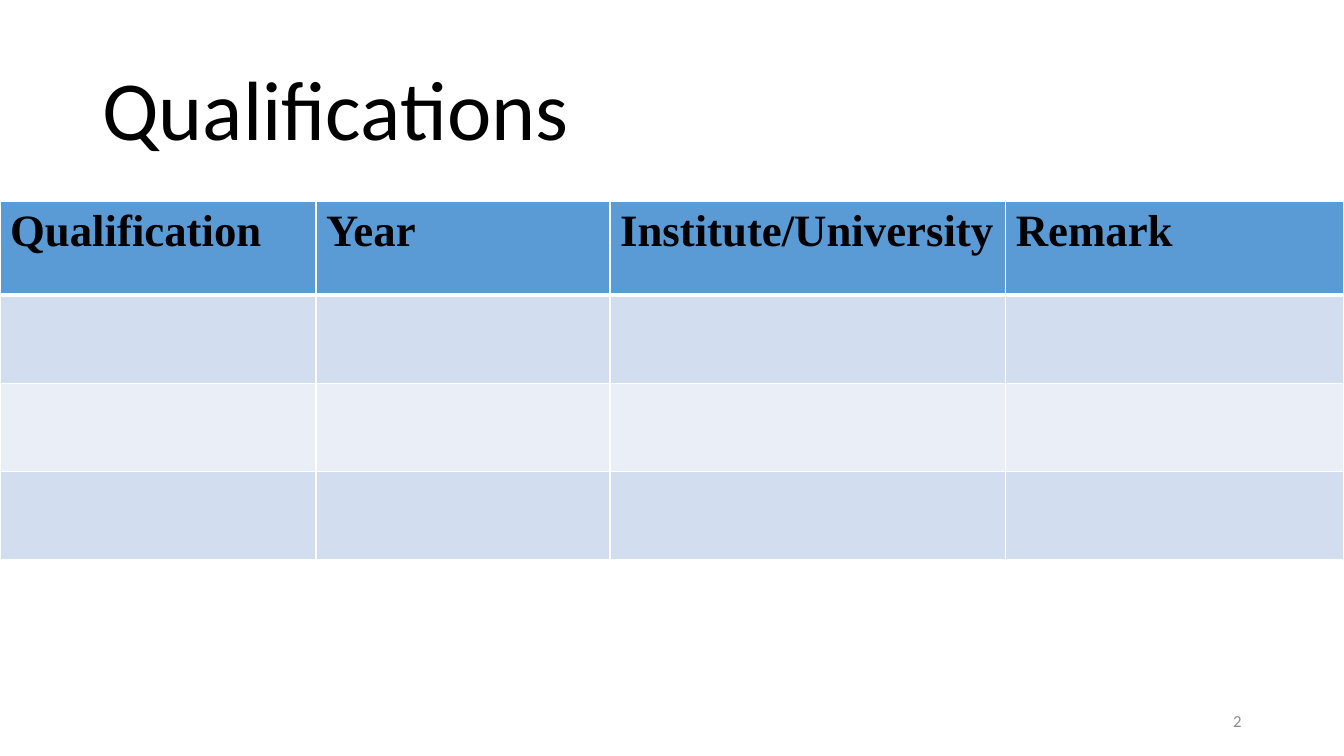
from lxml import etree
from pptx import Presentation
from pptx import util as u
from pptx.dml.color import RGBColor
from pptx.enum import text
from pptx.oxml import ns

PX = 9525
SLIDE_SIZE = (1280, 720)
HEADINGS = ["Qualification", "Year", "Institute/University", "Remark"]
COLUMN_WIDTHS = [301, 280, 377, 322]
ROW_HEIGHTS = [89, 84, 84, 84]
HEADER_FILL = "5B9BD5"
BAND_FILLS = ["EAEFF7", "D2DEEF"]


def px(length):
    """Turn whole pixels into EMU."""
    return u.Emu(length * PX)


def paint(target, color):
    """Give a fill or a font a solid hex colour."""
    if hasattr(target, "solid"):
        target.solid()
        target.fore_color.rgb = RGBColor.from_string(color)
    else:
        target.color.rgb = RGBColor.from_string(color)


def add_run(paragraph, words, size, font, color, bold=False):
    """Add one styled run to a paragraph."""
    run = paragraph.add_run()
    run.text = words
    run.font.size = u.Pt(size)
    run.font.name = font
    run.font.bold = bold
    paint(run.font, color)


def add_text(slide, box, words, size, color, align, line_spacing=1.0):
    """Add a vertically centred line of Calibri text."""
    frame = slide.shapes.add_textbox(*map(px, box)).text_frame
    frame.word_wrap = True
    frame.vertical_anchor = text.MSO_ANCHOR.MIDDLE
    paragraph = frame.paragraphs[0]
    paragraph.alignment = align
    paragraph.line_spacing = line_spacing
    add_run(paragraph, words, size, "Calibri", color)


def add_border(cell, side, points, color):
    """Draw one side of a cell's border."""
    properties = cell._tc.get_or_add_tcPr()
    line = etree.SubElement(properties, ns.qn(f"a:ln{side}"), w=str(u.Pt(points)))
    fill = etree.SubElement(line, ns.qn("a:solidFill"))
    etree.SubElement(fill, ns.qn("a:srgbClr"), val=color)


def style_cell(cell, row):
    """Set the borders and fill that belong to a row."""
    widths = {"L": 1, "R": 1, "T": 3 if row == 1 else 1, "B": 3 if row == 0 else 1}
    for side, points in widths.items():
        add_border(cell, side, points, "FFFFFF")
    paint(cell.fill, BAND_FILLS[row % 2] if row else HEADER_FILL)


def add_qualification_table(slide, left, top):
    """Add the table with its headings and empty banded rows."""
    table = slide.shapes.add_table(
        len(ROW_HEIGHTS), len(COLUMN_WIDTHS), px(left), px(top),
        px(sum(COLUMN_WIDTHS)), px(sum(ROW_HEIGHTS))).table
    for column, width in zip(table.columns, COLUMN_WIDTHS):
        column.width = px(width)
    for index, height in enumerate(ROW_HEIGHTS):
        table.rows[index].height = px(height)
        for cell in table.rows[index].cells:
            style_cell(cell, index)
    for cell, heading in zip(table.rows[0].cells, HEADINGS):
        add_run(cell.text_frame.paragraphs[0], heading, 32,
                "Times New Roman", "000000", bold=True)


def main():
    """Build the qualifications slide and save it."""
    presentation = Presentation()
    presentation.slide_width, presentation.slide_height = map(px, SLIDE_SIZE)
    slide = presentation.slides.add_slide(presentation.slide_layouts[6])
    add_text(slide, (88, 38, 1104, 139), "Qualifications", 60, "000000",
             text.PP_ALIGN.LEFT, line_spacing=0.9)
    add_qualification_table(slide, 0, 192)
    add_text(slide, (904, 667, 288, 38), "2", 12, "8C8C8C", text.PP_ALIGN.RIGHT)
    presentation.save("out.pptx")


if __name__ == "__main__":
    main()
